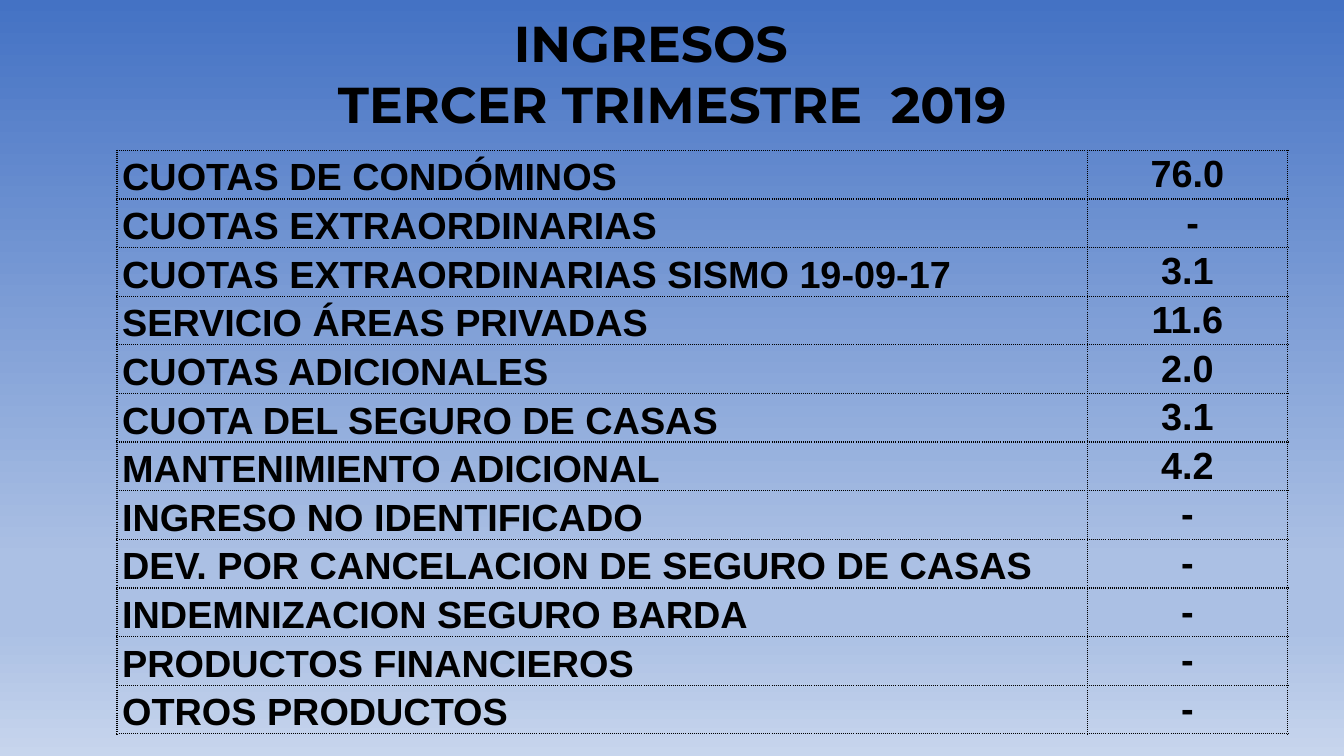
from dataclasses import dataclass

from lxml.etree import SubElement
from pptx import Presentation
from pptx.dml.color import RGBColor as RGB
from pptx.enum.text import MSO_ANCHOR as ANCHOR, MSO_AUTO_SIZE as FIT, PP_ALIGN as ALIGN
from pptx.oxml import parse_xml
from pptx.oxml.ns import nsdecls, qn
from pptx.util import Cm, Pt


@dataclass(frozen=True)
class Theme:
    """Colours, fonts and type sizes of the slide."""
    ink: str = "000000"
    sky: tuple = ((0, "4472C4"), (74, "ABC0E4"), (83, "ABC0E4"), (100, "C7D5ED"))
    title_font: str = "Montserrat"
    body_font: str = "Arial"
    title_size: int = 36
    body_size: int = 27


THEME = Theme()
TITLE = ("INGRESOS   ", "TERCER TRIMESTRE  2019")
INCOME = (
    ("CUOTAS DE CONDÓMINOS", "76.0"),
    ("CUOTAS EXTRAORDINARIAS", " -"),
    ("CUOTAS EXTRAORDINARIAS SISMO 19-09-17", "3.1"),
    ("SERVICIO ÁREAS PRIVADAS", "11.6"),
    ("CUOTAS ADICIONALES", "2.0"),
    ("CUOTA DEL SEGURO DE CASAS", "3.1"),
    ("MANTENIMIENTO ADICIONAL", "4.2"),
    ("INGRESO NO IDENTIFICADO", "-"),
    ("DEV. POR CANCELACION DE SEGURO DE CASAS", "-"),
    ("INDEMNIZACION SEGURO BARDA", "-"),
    ("PRODUCTOS FINANCIEROS", "-"),
    ("OTROS PRODUCTOS", "-"),
)


def apply(obj, **values):
    """Set each named attribute of an object."""
    for name, value in values.items():
        setattr(obj, name, value)


def write(p, text, font, size, **layout):
    """Put bold text in a paragraph with the given layout."""
    apply(p, **layout)
    r = p.add_run()
    r.text = text
    apply(r.font, name=font, size=Pt(size), bold=True)
    r.font.color.rgb = RGB.from_string(THEME.ink)


def paint_background(s):
    """Fill the slide with the vertical sky gradient."""
    fill = s.background.fill
    fill.gradient()
    fill.gradient_angle = 270
    stops = next(s.element.iter(qn("a:gsLst")))
    for stop in list(stops):
        stops.remove(stop)
    for percent, color in THEME.sky:
        stop = SubElement(stops, qn("a:gs"), pos=str(percent * 1000))
        SubElement(stop, qn("a:srgbClr"), val=color)


def add_title(s, left, top, width, height):
    """Place the two-line title in its box."""
    sp = s.shapes.title
    apply(sp, left=left, top=top, width=width, height=height)
    tf = sp.text_frame
    apply(tf, word_wrap=False, auto_size=FIT.SHAPE_TO_FIT_TEXT, vertical_anchor=ANCHOR.TOP)
    for i, line in enumerate(TITLE):
        p = tf.add_paragraph() if i else tf.paragraphs[0]
        write(p, line, THEME.title_font, THEME.title_size, alignment=ALIGN.CENTER)


def add_borders(cell):
    """Draw dotted lines on the four sides of a cell."""
    tc_pr = cell._tc.get_or_add_tcPr()
    for i, side in enumerate("LRTB"):
        tc_pr.insert(i, parse_xml(
            f'<a:ln{side} {nsdecls("a")} w="{Pt(1)}"><a:solidFill><a:srgbClr val="{THEME.ink}"/>'
            f'</a:solidFill><a:prstDash val="dot"/></a:ln{side}>'))


def add_income_table(s, left, top, width, height):
    """Place the income table, with concepts at left and amounts at right."""
    amount_width = Cm(5.05)
    table = s.shapes.add_table(len(INCOME), 2, left, top, width, height).table
    apply(table, first_row=False, horz_banding=False)
    table.columns[0].width = width - amount_width
    table.columns[1].width = amount_width
    columns = ((ANCHOR.BOTTOM, ALIGN.LEFT), (ANCHOR.TOP, ALIGN.CENTER))
    for i, entry in enumerate(INCOME):
        for j, (text, (anchor, align)) in enumerate(zip(entry, columns)):
            cell = table.cell(i, j)
            apply(cell, margin_left=Cm(0.13), margin_right=Cm(0.13), margin_top=0,
                  margin_bottom=0, vertical_anchor=anchor)
            cell.fill.background()
            add_borders(cell)
            write(cell.text_frame.paragraphs[0], text, THEME.body_font, THEME.body_size,
                  alignment=align, line_spacing=1.07)


def main():
    """Build and save the income slide."""
    prs = Presentation()
    apply(prs, slide_width=Cm(33.87), slide_height=Cm(19.05))
    s = prs.slides.add_slide(prs.slide_layouts[5])
    paint_background(s)
    add_title(s, Cm(7.29), Cm(0.18), Cm(19.3), Cm(3.33))
    add_income_table(s, Cm(2.95), Cm(3.79), Cm(29.5), Cm(14.64))
    prs.save("out.pptx")


if __name__ == "__main__":
    main()
